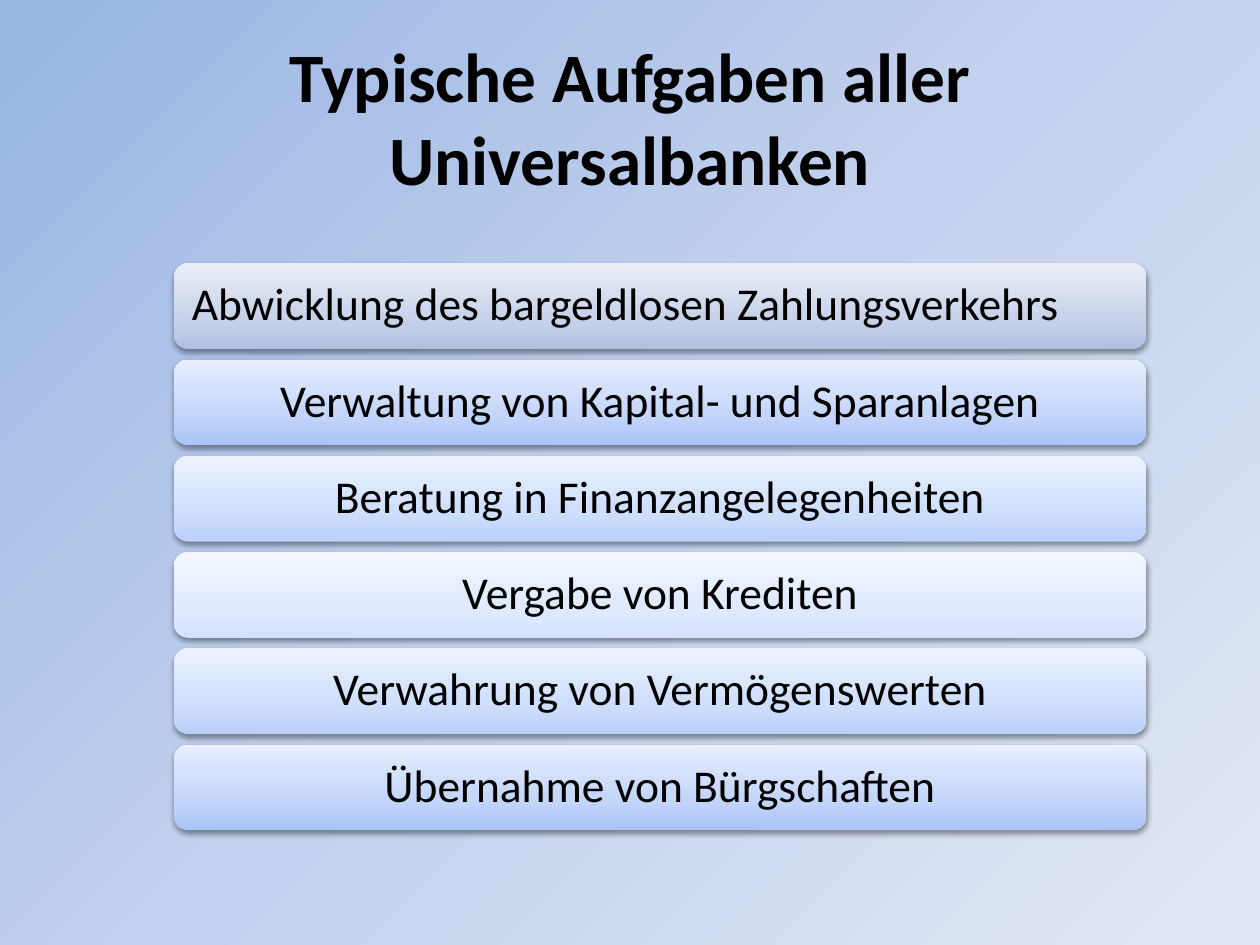
from lxml.etree import SubElement
from pptx import Presentation
from pptx.dml.color import RGBColor
from pptx.enum.shapes import MSO_SHAPE as Shape
from pptx.enum.text import MSO_ANCHOR as Anchor, PP_ALIGN as Align
from pptx.oxml.ns import qn
from pptx.util import Inches, Pt

COLORS = {
    "text": "000000",
    "shadow": "000000",
    "background": ("9AB5E4", "C2D1ED", "E1E8F5"),
    "grey": ("AFC0E1", "C7D2E9", "E9EEF7"),
    "strong": ("A9C4F8", "C3D5F9", "E7EEFE"),
    "medium": ("BAD1FC", "CEDEFC", "EBF2FF"),
    "pale": ("D4E2FD", "E0EAFE", "F2F6FF"),
}
TASKS = [
    ("Abwicklung des bargeldlosen Zahlungsverkehrs", "grey", Align.LEFT),
    ("Verwaltung von Kapital- und Sparanlagen", "strong", Align.CENTER),
    ("Beratung in Finanzangelegenheiten", "medium", Align.CENTER),
    ("Vergabe von Krediten", "pale", Align.CENTER),
    ("Verwahrung von Vermögenswerten", "medium", Align.CENTER),
    ("Übernahme von Bürgschaften", "strong", Align.CENTER),
]
BAR_LEFT, BAR_TOP, BAR_WIDTH, BAR_HEIGHT = 1.38, 2.09, 7.72, 0.68
BAR_STEP = 0.764


def add_color(parent, color):
    return SubElement(parent, qn("a:srgbClr"), val=color)


def paint_gradient(owner, fill, colors, middle, angle):
    fill.gradient()
    fill.gradient_angle = angle
    stops = owner.element.find(".//" + qn("a:gsLst"))
    for stop in list(stops):
        stops.remove(stop)
    for position, color in zip((0, middle, 100), colors):
        add_color(SubElement(stops, qn("a:gs"), pos=str(position * 1000)), color)


def add_shadow(shape):
    shape.shadow.inherit = False
    effects = shape.element.spPr.find(qn("a:effectLst"))
    shadow = SubElement(effects, qn("a:outerShdw"), blurRad=str(Pt(3.1)),
                        dist=str(Pt(1.6)), dir="5400000", rotWithShape="0")
    SubElement(add_color(shadow, COLORS["shadow"]), qn("a:alpha"), val="38000")


def style_text(paragraph, size, align, bold=False):
    paragraph.alignment = align
    font = paragraph.font
    font.name, font.size, font.bold = "Calibri", Pt(size), bold
    font.color.rgb = RGBColor.from_string(COLORS["text"])


def set_title(page, text):
    title = page.shapes.title
    title.left, title.top = Inches(0.5), Inches(0.3)
    title.width, title.height = Inches(9), Inches(1.25)
    title.text_frame.text = text
    title.text_frame.vertical_anchor = Anchor.MIDDLE
    style_text(title.text_frame.paragraphs[0], 39.6, Align.CENTER, bold=True)


def add_task_bar(page, top, text, tone, align):
    bar = page.shapes.add_shape(Shape.ROUNDED_RECTANGLE, Inches(BAR_LEFT), Inches(top),
                                Inches(BAR_WIDTH), Inches(BAR_HEIGHT))
    paint_gradient(bar, bar.fill, COLORS[tone], 35, 90)
    bar.line.fill.background()
    add_shadow(bar)
    frame = bar.text_frame
    frame.word_wrap = True
    frame.vertical_anchor = Anchor.MIDDLE
    frame.margin_left = frame.margin_right = Inches(0.11)
    frame.margin_top = frame.margin_bottom = Inches(0.11)
    frame.text = text
    para = frame.paragraphs[0]
    para.line_spacing = 0.9
    style_text(para, 26, align)


def main():
    deck = Presentation()
    deck.slide_width, deck.slide_height = Inches(10), Inches(7.5)
    page = deck.slides.add_slide(deck.slide_layouts[5])
    paint_gradient(page, page.background.fill, COLORS["background"], 50, 315)
    set_title(page, "Typische Aufgaben aller Universalbanken")
    for row, (text, tone, align) in enumerate(TASKS):
        add_task_bar(page, BAR_TOP + row * BAR_STEP, text, tone, align)
    deck.save("out.pptx")


if __name__ == "__main__":
    main()
